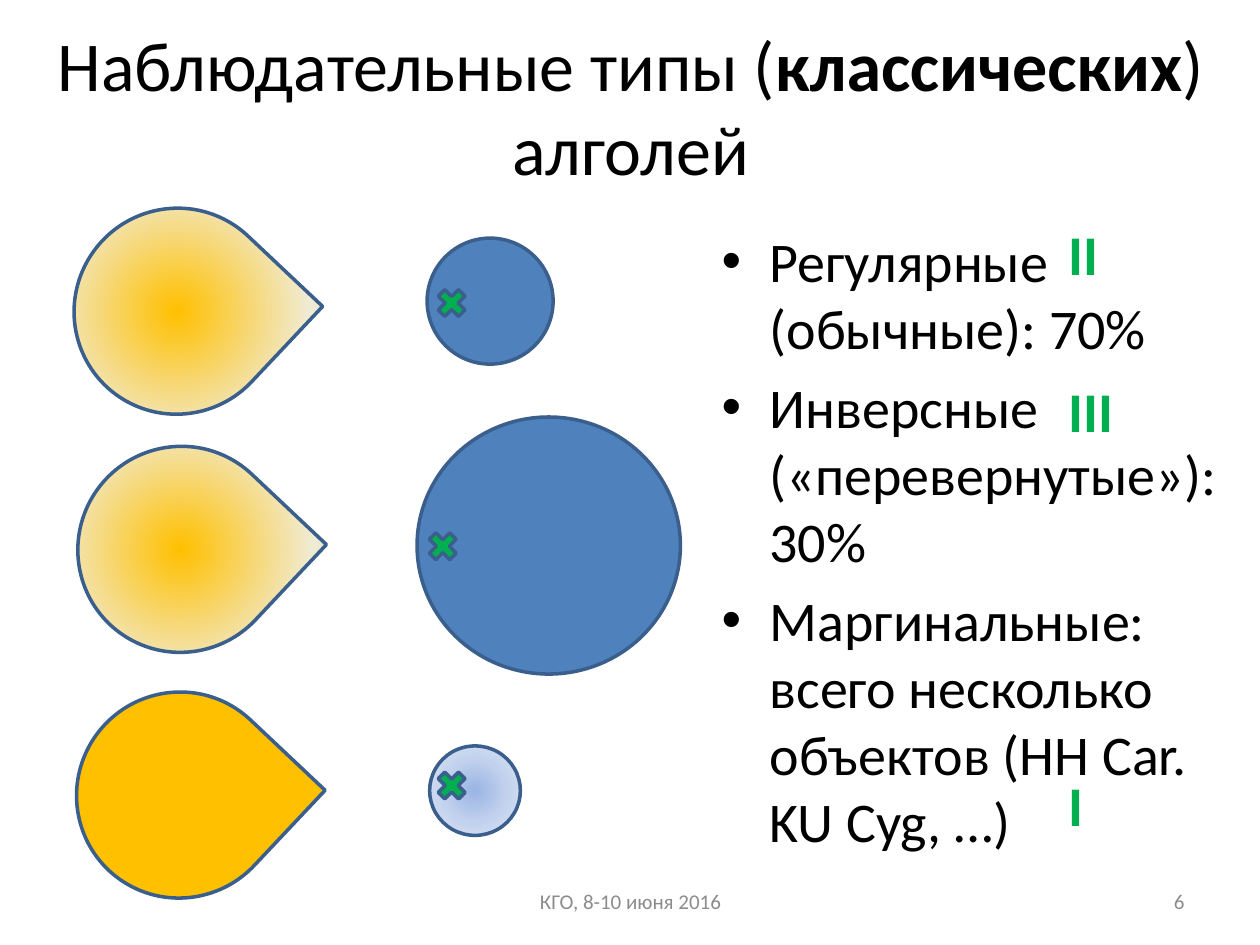
from dataclasses import dataclass

from lxml.etree import SubElement
from pptx import Presentation
from pptx.dml.color import RGBColor
from pptx.enum.shapes import MSO_SHAPE
from pptx.enum.text import MSO_ANCHOR, PP_ALIGN
from pptx.oxml import parse_xml
from pptx.oxml.ns import nsdecls, qn
from pptx.util import Inches, Pt

COLORS = {
    "text": "000000",
    "footer": "8C8C8C",
    "green": "00B050",
    "outline": "3A5F8C",
    "blue": "4F81BD",
    "yellow": "FFC000",
}
YELLOW_GLOW = ((0, "FFC000"), (65, "F0EBD5"), (100, "D1C39F"))
BLUE_GLOW = ((0, "9AB5E4"), (50, "C2D1ED"), (100, "E1E8F5"))


@dataclass
class Star:
    kind: MSO_SHAPE
    left: float
    top: float
    width: float
    height: float
    fill: str | tuple
    rotation: float = 0


@dataclass
class TextBlock:
    """Text with one list of (wording, bold) runs per paragraph."""
    left: float
    top: float
    width: float
    height: float
    paragraphs: list
    size: int
    color: str = "text"
    align: PP_ALIGN = PP_ALIGN.LEFT
    anchor: MSO_ANCHOR = MSO_ANCHOR.TOP
    bulleted: bool = False


def lobe(left: float, top: float, fill: str | tuple) -> Star:
    return Star(MSO_SHAPE.TEAR, left, top, 1.63, 1.64, fill, 43.3)


def cross(left: float, top: float) -> Star:
    return Star(MSO_SHAPE.MATH_MULTIPLY, left, top, 0.31, 0.31, "green")


def numeral(wording: str, row: int) -> TextBlock:
    """A type number placed on a row of the 0.625 inch text grid."""
    return TextBlock(8.38, 1.69 + 0.625 * row, 1.26, 0.64, [[(wording, True)]], 32, "green")


STARS = [
    lobe(0.62, 3.54, YELLOW_GLOW),
    Star(MSO_SHAPE.OVAL, 3.39, 1.89, 1, 1, "blue"),
    lobe(0.59, 1.65, YELLOW_GLOW),
    lobe(0.61, 5.49, "yellow"),
    Star(MSO_SHAPE.OVAL, 3.31, 3.31, 2.09, 2.04, "blue"),
    Star(MSO_SHAPE.OVAL, 3.41, 5.92, 0.72, 0.71, BLUE_GLOW),
]
CROSSES = [cross(3.43, 2.25), cross(3.36, 4.18), cross(3.43, 6.08)]

HEADINGS = [
    TextBlock(0.2, 0.21, 9.61, 1.26,
              [[("Наблюдательные типы (", False), ("классических", True), (") алголей", False)]],
              40, align=PP_ALIGN.CENTER, anchor=MSO_ANCHOR.MIDDLE),
    TextBlock(5.63, 1.75, 4.17, 5.47,
              [[("Регулярные (обычные): 70%", False)],
               [("Инверсные («перевернутые»): 30%", False)],
               [("Маргинальные: всего несколько объектов (HH Car. KU Cyg, …)", False)]],
              32, bulleted=True),
]
LABELS = [
    numeral("II", 0),
    numeral("III", 2),
    numeral("I", 7),
    TextBlock(7.17, 6.95, 2.33, 0.4, [[("6", False)]], 12, "footer",
              PP_ALIGN.RIGHT, MSO_ANCHOR.MIDDLE),
    TextBlock(3.42, 6.95, 3.17, 0.4, [[("КГО, 8-10 июня 2016", False)]], 12, "footer",
              PP_ALIGN.CENTER, MSO_ANCHOR.MIDDLE),
]


def set_radial_fill(shape, stops: tuple) -> None:
    """Fill from the centre outwards; python-pptx offers linear gradients only."""
    shape.fill.gradient()
    stop_xml = "".join(
        f'<a:gs pos="{position * 1000}"><a:srgbClr val="{color}"/></a:gs>'
        for position, color in stops
    )
    radial = parse_xml(
        f'<a:gradFill {nsdecls("a")} rotWithShape="1"><a:gsLst>{stop_xml}</a:gsLst>'
        '<a:path path="circle"><a:fillToRect l="50000" t="50000" r="50000" b="50000"/></a:path>'
        "</a:gradFill>"
    )
    properties = shape.element.spPr
    properties.replace(properties.find(qn("a:gradFill")), radial)


def draw_star(slide, star: Star) -> None:
    box = map(Inches, (star.left, star.top, star.width, star.height))
    shape = slide.shapes.add_shape(star.kind, *box)
    shape.shadow.inherit = False
    shape.rotation = star.rotation
    if isinstance(star.fill, tuple):
        set_radial_fill(shape, star.fill)
    else:
        shape.fill.solid()
        shape.fill.fore_color.rgb = RGBColor.from_string(COLORS[star.fill])
    shape.line.color.rgb = RGBColor.from_string(COLORS["outline"])
    shape.line.width = Pt(2)


def add_bullet(paragraph) -> None:
    paragraph.space_before = Pt(6.4)
    properties = paragraph._p.get_or_add_pPr()
    properties.set("marL", str(Inches(0.38)))
    properties.set("indent", str(Inches(-0.38)))
    SubElement(properties, qn("a:buFont"), typeface="Arial")
    SubElement(properties, qn("a:buChar"), char="•")


def draw_text(slide, block: TextBlock) -> None:
    box = map(Inches, (block.left, block.top, block.width, block.height))
    frame = slide.shapes.add_textbox(*box).text_frame
    frame.word_wrap = True
    frame.vertical_anchor = block.anchor
    font_format = {"name": "Calibri", "size": Pt(block.size)}
    for index, runs in enumerate(block.paragraphs):
        paragraph = frame.add_paragraph() if index else frame.paragraphs[0]
        paragraph.alignment = block.align
        if block.bulleted:
            add_bullet(paragraph)
        for wording, bold in runs:
            run = paragraph.add_run()
            run.text = wording
            for name, value in {**font_format, "bold": bold}.items():
                setattr(run.font, name, value)
            run.font.color.rgb = RGBColor.from_string(COLORS[block.color])


def main() -> None:
    presentation = Presentation()
    presentation.slide_width = Inches(10)
    presentation.slide_height = Inches(7.5)
    slide = presentation.slides.add_slide(presentation.slide_layouts[6])
    for block in HEADINGS:
        draw_text(slide, block)
    for star in STARS:
        draw_star(slide, star)
    for block in LABELS:
        draw_text(slide, block)
    for mark in CROSSES:
        draw_star(slide, mark)
    presentation.save("out.pptx")


if __name__ == "__main__":
    main()
